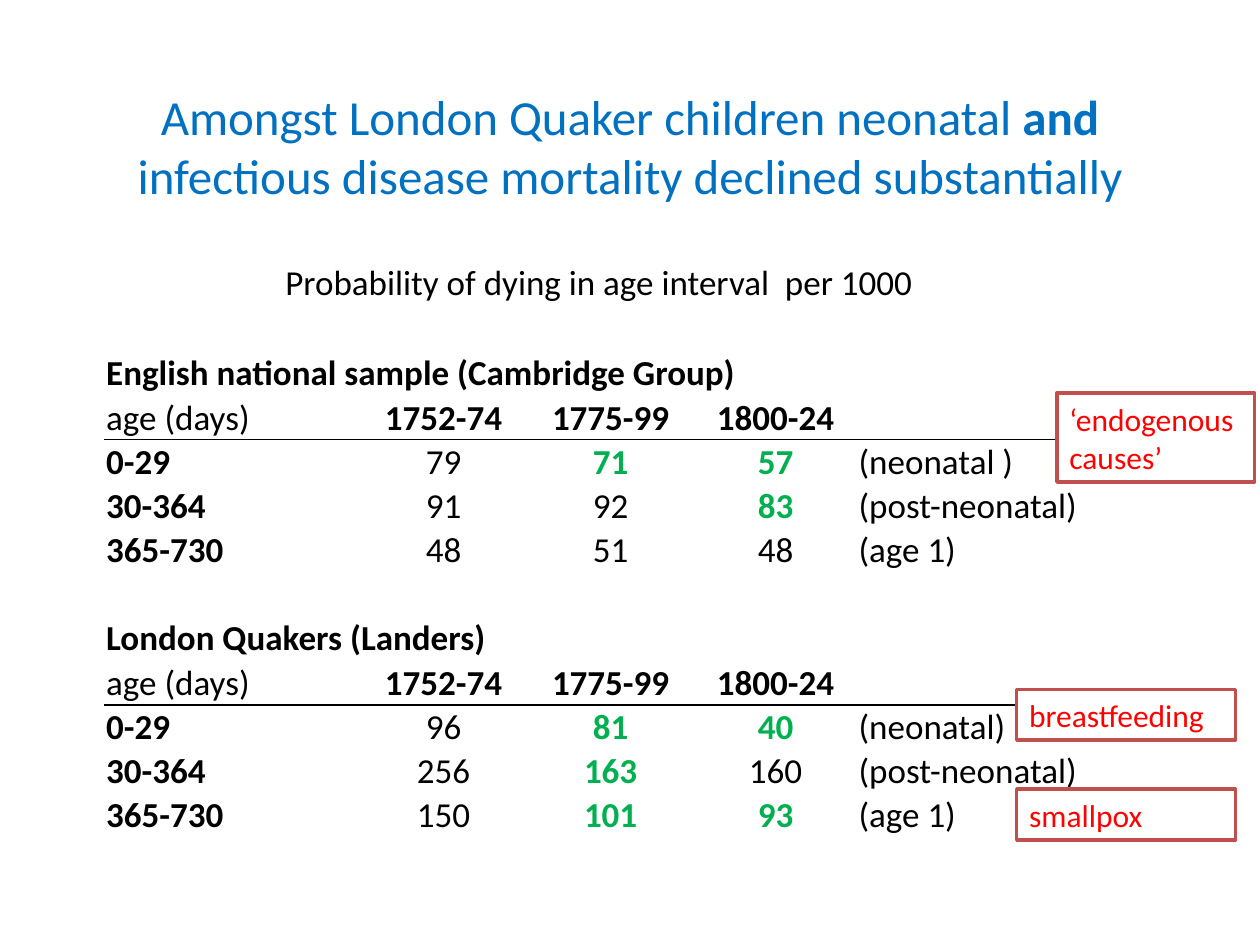
from lxml import etree
from pptx import Presentation
from pptx.dml.color import RGBColor
from pptx.enum.shapes import MSO_SHAPE
from pptx.enum.text import MSO_ANCHOR, PP_ALIGN
from pptx.oxml.ns import qn
from pptx.util import Pt

LEFT, CENTER = PP_ALIGN.LEFT, PP_ALIGN.CENTER
MIDDLE, BOTTOM = MSO_ANCHOR.MIDDLE, MSO_ANCHOR.BOTTOM
RECTANGLE = MSO_SHAPE.RECTANGLE
FONT = "Calibri"
COLORS = {
    "title": "0070C0", "text": "000000", "decline": "00B050",
    "callout": "FF0000", "callout_line": "C0504D", "white": "FFFFFF",
}

TITLE = [("Amongst London Quaker children neonatal ", False), ("and", True),
         (" infectious disease mortality declined substantially", False)]
CAPTION = "Probability of dying in age interval  per 1000"
HEADER = ["age (days)", "1752-74", "1775-99", "1800-24"]
# Each age row: age in days, values by period, columns marked as declines, age name
SAMPLES = [
    {"name": "English national sample (Cambridge Group)", "name_columns": 4,
     "ages": [("0-29", (79, 71, 57), {2, 3}, "(neonatal )"),
              ("30-364", (91, 92, 83), {3}, "(post-neonatal)"),
              ("365-730", (48, 51, 48), set(), "(age 1)")]},
    {"name": "London Quakers (Landers)", "name_columns": 2,
     "ages": [("0-29", (96, 81, 40), {2, 3}, "(neonatal)"),
              ("30-364", (256, 163, 160), {2}, "(post-neonatal)"),
              ("365-730", (150, 101, 93), {2, 3}, "(age 1)")]},
]
CALLOUTS = [  # text, left, top, width, height
    ("‘endogenous causes’", 604, 224.5, 113, 51),
    ("breastfeeding", 581, 394, 125, 29),
    ("smallpox", 581, 451, 125, 29),
]

TABLE_LEFT, TABLE_TOP = 60, 177
COLUMN_WIDTHS = [145.5, 96, 95, 93.5, 160]
ROW_HEIGHTS = [49] + [25] * 6 + [26] + [25] * 4
ROWS_PER_SAMPLE = 6


def format_text(para, size, color, bold=False, align=LEFT):
    para.alignment = align
    font = para.font
    font.name, font.size, font.bold = FONT, Pt(size), bold
    font.color.rgb = RGBColor.from_string(COLORS[color])


def rule_edge(cell, side):
    """Draw a 1 pt line on the cell's top (lnT) or bottom (lnB) edge."""
    line = etree.Element(qn(f"a:{side}"), w=str(Pt(1)))
    fill = etree.SubElement(line, qn("a:solidFill"))
    etree.SubElement(fill, qn("a:srgbClr"), val=COLORS["text"])
    cell._tc.get_or_add_tcPr().insert(0, line)


def write_cell(cell, text, bold=False, align=LEFT, color="text"):
    cell.text = str(text)
    format_text(cell.text_frame.paragraphs[0], 20, color, bold, align)


def write_sample(table, first, sample):
    name_cell = table.cell(first, 0)
    name_cell.merge(table.cell(first, sample["name_columns"] - 1))
    write_cell(name_cell, sample["name"], bold=True)

    for column, label in enumerate(HEADER):
        write_cell(table.cell(first + 1, column), label,
                   bold=column > 0, align=CENTER if column else LEFT)
    for column in range(len(COLUMN_WIDTHS)):
        rule_edge(table.cell(first + 1, column), "lnB")
        rule_edge(table.cell(first + 2, column), "lnT")

    for row, (days, values, declines, age_name) in enumerate(sample["ages"], first + 2):
        write_cell(table.cell(row, 0), days, bold=True)
        for column, value in enumerate(values, 1):
            marked = column in declines
            write_cell(table.cell(row, column), value, marked, CENTER,
                       "decline" if marked else "text")
        write_cell(table.cell(row, 4), age_name)


def add_mortality_table(page):
    table = page.shapes.add_table(
        len(ROW_HEIGHTS), len(COLUMN_WIDTHS), Pt(TABLE_LEFT), Pt(TABLE_TOP),
        Pt(sum(COLUMN_WIDTHS)), Pt(sum(ROW_HEIGHTS))).table
    table.first_row = table.horz_banding = False
    for column, width in zip(table.columns, COLUMN_WIDTHS):
        column.width = Pt(width)
    for row, height in zip(table.rows, ROW_HEIGHTS):
        row.height = Pt(height)
    for cell in table.iter_cells():
        cell.fill.background()
        cell.vertical_anchor = BOTTOM
        cell.margin_left = cell.margin_right = cell.margin_top = Pt(0.7)
        cell.margin_bottom = 0
    for index, sample in enumerate(SAMPLES):
        write_sample(table, index * ROWS_PER_SAMPLE, sample)


def add_callout(page, text, left, top, width, height):
    box = page.shapes.add_shape(RECTANGLE, Pt(left), Pt(top), Pt(width), Pt(height))
    box.shadow.inherit = False
    box.fill.solid()
    box.fill.fore_color.rgb = RGBColor.from_string(COLORS["white"])
    box.line.color.rgb = RGBColor.from_string(COLORS["callout_line"])
    box.line.width = Pt(2)
    frame = box.text_frame
    frame.word_wrap = True
    frame.text = text
    format_text(frame.paragraphs[0], 18, "callout")


def main():
    deck = Presentation()
    deck.slide_width, deck.slide_height = Pt(720), Pt(540)
    page = deck.slides.add_slide(deck.slide_layouts[5])

    title = page.shapes.title
    title.left, title.top, title.width, title.height = Pt(36), Pt(38), Pt(648), Pt(90)
    title.text_frame.vertical_anchor = MIDDLE
    para = title.text_frame.paragraphs[0]
    format_text(para, 28, "title", align=CENTER)
    for text, bold in TITLE:
        span = para.add_run()
        span.text, span.font.bold = text, bold

    add_mortality_table(page)

    caption = page.shapes.add_textbox(Pt(156), Pt(145.5), Pt(376), Pt(31.5))
    caption.text_frame.word_wrap = False
    caption.text_frame.text = CAPTION
    format_text(caption.text_frame.paragraphs[0], 20, "text")

    for callout in CALLOUTS:
        add_callout(page, *callout)

    deck.save("out.pptx")


if __name__ == "__main__":
    main()
